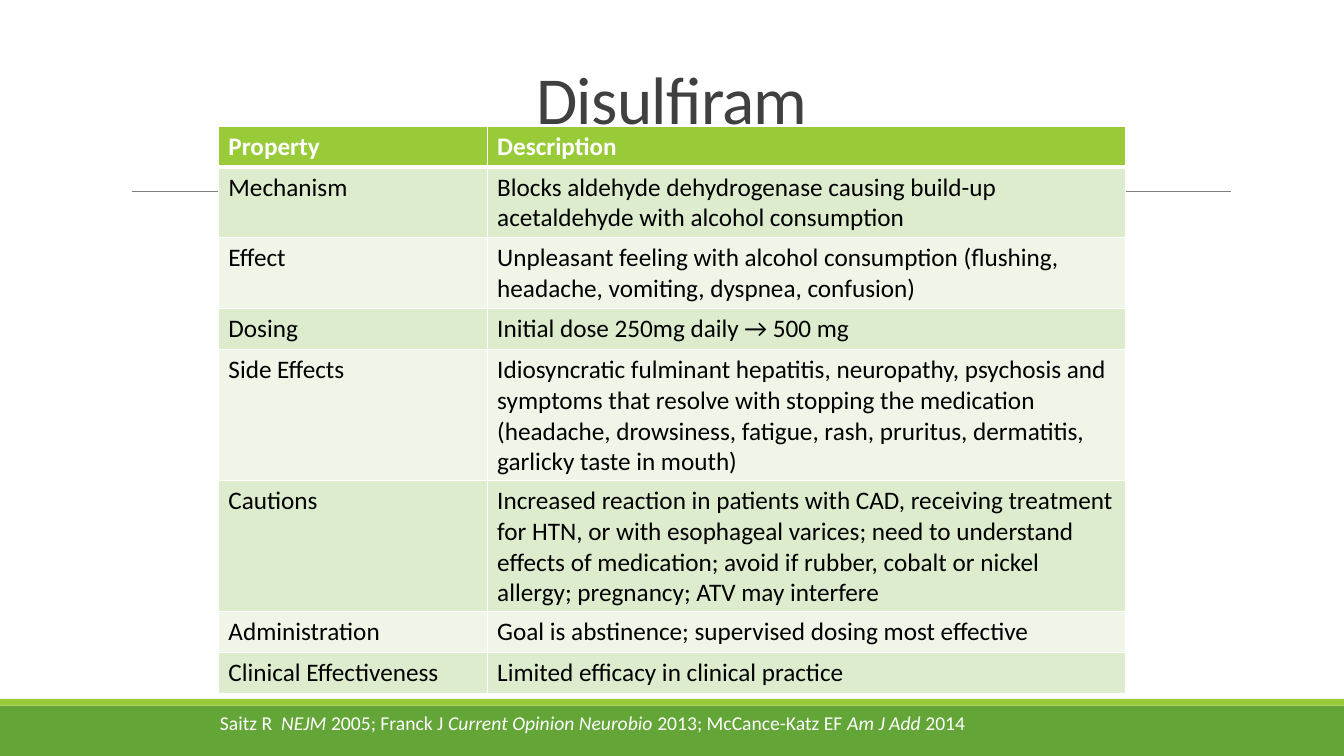
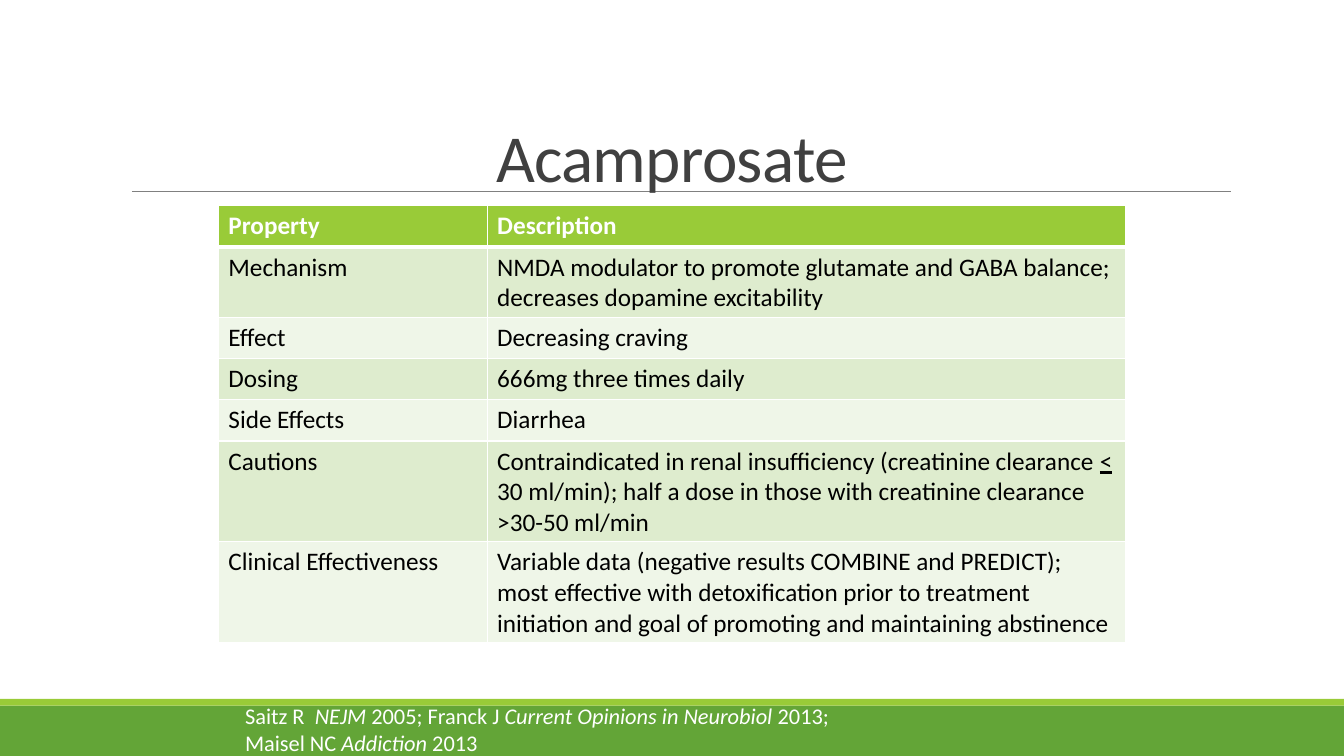
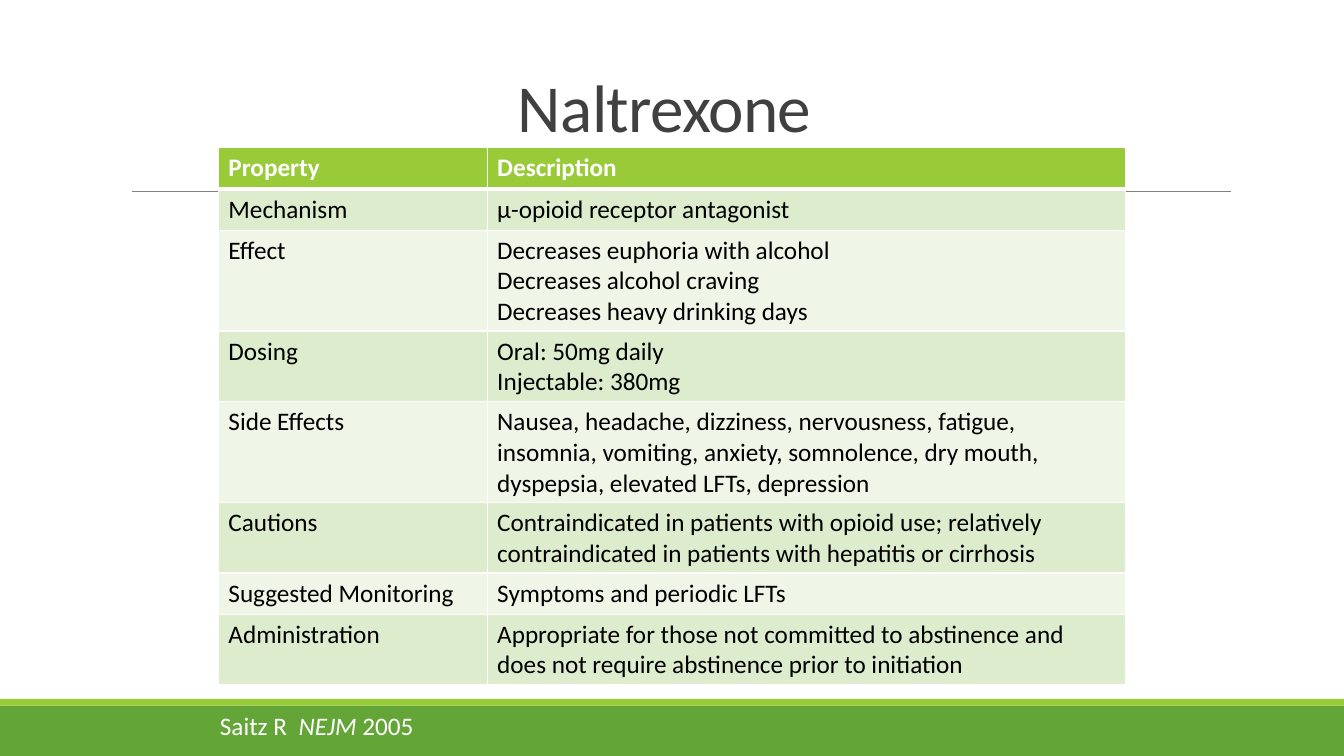
from pptx import Presentation
from pptx.dml.color import RGBColor
from pptx.enum.shapes import MSO_CONNECTOR as Connector, MSO_SHAPE as Preset
from pptx.enum.text import MSO_ANCHOR as Anchor, PP_ALIGN as Align
from pptx.oxml.ns import qn
from pptx.util import Inches, Pt
from lxml.etree import SubElement

FONT = "Calibri"
WHITE = RGBColor(0xFF, 0xFF, 0xFF)
BLACK = RGBColor(0x00, 0x00, 0x00)
TITLE_GREY = RGBColor(0x40, 0x40, 0x40)
RULE_GREY = RGBColor(0x80, 0x80, 0x80)
BAND_GREEN = RGBColor(0x63, 0xA5, 0x37)
ACCENT_GREEN = RGBColor(0x99, 0xCB, 0x38)
ROW_TINTS = RGBColor(0xEF, 0xF6, 0xE8), RGBColor(0xDE, 0xEC, 0xCE)

COLUMNS, ROWS = 160, 90
LEFT, WIDTH = 26, 108
PROPERTY_WIDTH = 32
ROW_HEIGHT = 4.9
BAND_TOP = 84


def cells(count):
    return Inches(count / 12)


def write(frame, text, size=18, color=BLACK, bold=False, mark="italic",
          align=Align.LEFT, line_spacing=None, tracking=None):
    for index, content in enumerate(text.split("\n")):
        paragraph = frame.add_paragraph() if index else frame.paragraphs[0]
        paragraph.alignment = align
        if line_spacing:
            paragraph.line_spacing = line_spacing
        for position, piece in enumerate(content.split("*")):
            run = paragraph.add_run()
            run.text = piece
            font = run.font
            font.name, font.size, font.bold = FONT, Pt(size), bold
            font.color.rgb = color
            if position % 2:
                setattr(font, mark, True)
            if tracking:
                run._r.get_or_add_rPr().set("spc", str(tracking))


def add_borders(cell, top, bottom):
    properties = cell._tc.get_or_add_tcPr()
    for side, points in (("L", 1), ("R", 1), ("T", top), ("B", bottom)):
        edge = SubElement(properties, qn(f"a:ln{side}"), w=str(Pt(points)))
        fill = SubElement(edge, qn("a:solidFill"))
        SubElement(fill, qn("a:srgbClr"), val=str(WHITE))


class Deck:
    def __init__(self):
        self.file = Presentation()
        self.file.slide_width = cells(COLUMNS)
        self.file.slide_height = cells(ROWS)
        self.slide = None

    def start(self):
        self.slide = self.file.slides.add_slide(self.file.slide_layouts[6])
        self.band(BAND_TOP, ROWS - BAND_TOP, BAND_GREEN)
        self.band(83.2, 0.8, ACCENT_GREEN)
        self.rule(15.7, 146.5, 22.8)

    def band(self, top, height, color):
        band = self.slide.shapes.add_shape(
            Preset.RECTANGLE, 0, cells(top), cells(COLUMNS), cells(height))
        band.shadow.inherit = False
        band.fill.solid()
        band.fill.fore_color.rgb = color
        band.line.fill.background()

    def rule(self, left, right, top):
        rule = self.slide.shapes.add_connector(
            Connector.STRAIGHT, cells(left), cells(top), cells(right), cells(top))
        rule.line.color.rgb = RULE_GREY
        rule.line.width = Pt(0.5)
        SubElement(rule._element.spPr, qn("a:effectLst"))

    def box(self, left, top, width, height):
        return self.slide.shapes.add_textbox(
            cells(left), cells(top), cells(width), cells(height)).text_frame

    def title(self, text, top):
        frame = self.box(LEFT, top, WIDTH, 14)
        frame.word_wrap = True
        frame.vertical_anchor = Anchor.BOTTOM
        write(frame, text, size=48, color=TITLE_GREY, align=Align.CENTER,
              line_spacing=0.85, tracking=-50)

    def properties(self, entries, top):
        entries = [("Property", "Description"), *entries]
        table = self.slide.shapes.add_table(
            len(entries), 2, cells(LEFT), cells(top), cells(WIDTH),
            cells(ROW_HEIGHT * len(entries))).table
        table.columns[0].width = cells(PROPERTY_WIDTH)
        table.columns[1].width = cells(WIDTH - PROPERTY_WIDTH)
        for row, entry in enumerate(entries):
            header = row == 0
            for column, text in enumerate(entry):
                cell = table.cell(row, column)
                add_borders(cell, top=3 if row == 1 else 1, bottom=3 if header else 1)
                cell.fill.solid()
                cell.fill.fore_color.rgb = ACCENT_GREEN if header else ROW_TINTS[row % 2]
                write(cell.text_frame, text, color=WHITE if header else BLACK,
                      bold=header, mark="underline")

    def citation(self, text, left, top, width, height, size):
        frame = self.box(left, top, width, height)
        frame.word_wrap = False
        write(frame, text, size=size, color=WHITE)


DRUGS = [
    dict(
        title=("Disulfiram", 3),
        top=15,
        entries=[
            ("Mechanism", "Blocks aldehyde dehydrogenase causing build-up acetaldehyde "
                          "with alcohol consumption"),
            ("Effect", "Unpleasant feeling with alcohol consumption (flushing, headache, "
                       "vomiting, dyspnea, confusion)"),
            ("Dosing", "Initial dose 250mg daily → 500 mg"),
            ("Side Effects", "Idiosyncratic fulminant hepatitis, neuropathy, psychosis and "
                             "symptoms that resolve with stopping the medication (headache, "
                             "drowsiness, fatigue, rash, pruritus, dermatitis, garlicky "
                             "taste in mouth)"),
            ("Cautions", "Increased reaction in patients with CAD, receiving treatment for "
                         "HTN, or with esophageal varices; need to understand effects of "
                         "medication; avoid if rubber, cobalt or nickel allergy; pregnancy; "
                         "ATV may interfere"),
            ("Administration", "Goal is abstinence; supervised dosing most effective"),
            ("Clinical Effectiveness", "Limited efficacy in clinical practice"),
        ],
        citation=("Saitz R  *NEJM *2005; Franck J *Current Opinion Neurobio *2013; "
                  "McCance-Katz EF *Am J Add* 2014", 25, BAND_TOP, 92, 4, 14),
    ),
    dict(
        title=("Acamprosate", 10),
        top=24.5,
        entries=[
            ("Mechanism", "NMDA modulator to promote glutamate and GABA balance; "
                          "decreases dopamine excitability"),
            ("Effect", "Decreasing craving"),
            ("Dosing", "666mg three times daily"),
            ("Side Effects", "Diarrhea"),
            ("Cautions", "Contraindicated in renal insufficiency (creatinine clearance *<* "
                         "30 ml/min); half a dose in those with creatinine clearance "
                         ">30-50 ml/min"),
            ("Clinical Effectiveness", "Variable data (negative results COMBINE and "
                                       "PREDICT); most effective with detoxification prior "
                                       "to treatment initiation and goal of promoting and "
                                       "maintaining abstinence"),
        ],
        citation=("Saitz R  *NEJM *2005; Franck J *Current Opinions in Neurobiol *2013;\n"
                  "Maisel NC *Addiction* 2013", 28, 83, 73, 7, 16),
    ),
    dict(
        title=("Naltrexone ", 4),
        top=17.6,
        entries=[
            ("Mechanism", "μ-opioid receptor antagonist"),
            ("Effect", "Decreases euphoria with alcohol\nDecreases alcohol craving\n"
                       "Decreases heavy drinking days"),
            ("Dosing", "Oral: 50mg daily\nInjectable: 380mg"),
            ("Side Effects", "Nausea, headache, dizziness, nervousness, fatigue, insomnia, "
                             "vomiting, anxiety, somnolence, dry mouth, dyspepsia, elevated "
                             "LFTs, depression"),
            ("Cautions", "Contraindicated in patients with opioid use; relatively "
                         "contraindicated in patients with hepatitis or cirrhosis"),
            ("Suggested Monitoring", "Symptoms and periodic LFTs"),
            ("Administration", "Appropriate for those not committed to abstinence and does "
                               "not require abstinence prior to initiation"),
        ],
        citation=("Saitz R  *NEJM *2005", 25, BAND_TOP, 26, 5, 18),
    ),
]


def main():
    deck = Deck()
    for drug in DRUGS:
        deck.start()
        deck.title(*drug["title"])
        deck.properties(drug["entries"], drug["top"])
        deck.citation(*drug["citation"])
    deck.file.save("out.pptx")


if __name__ == "__main__":
    main()
